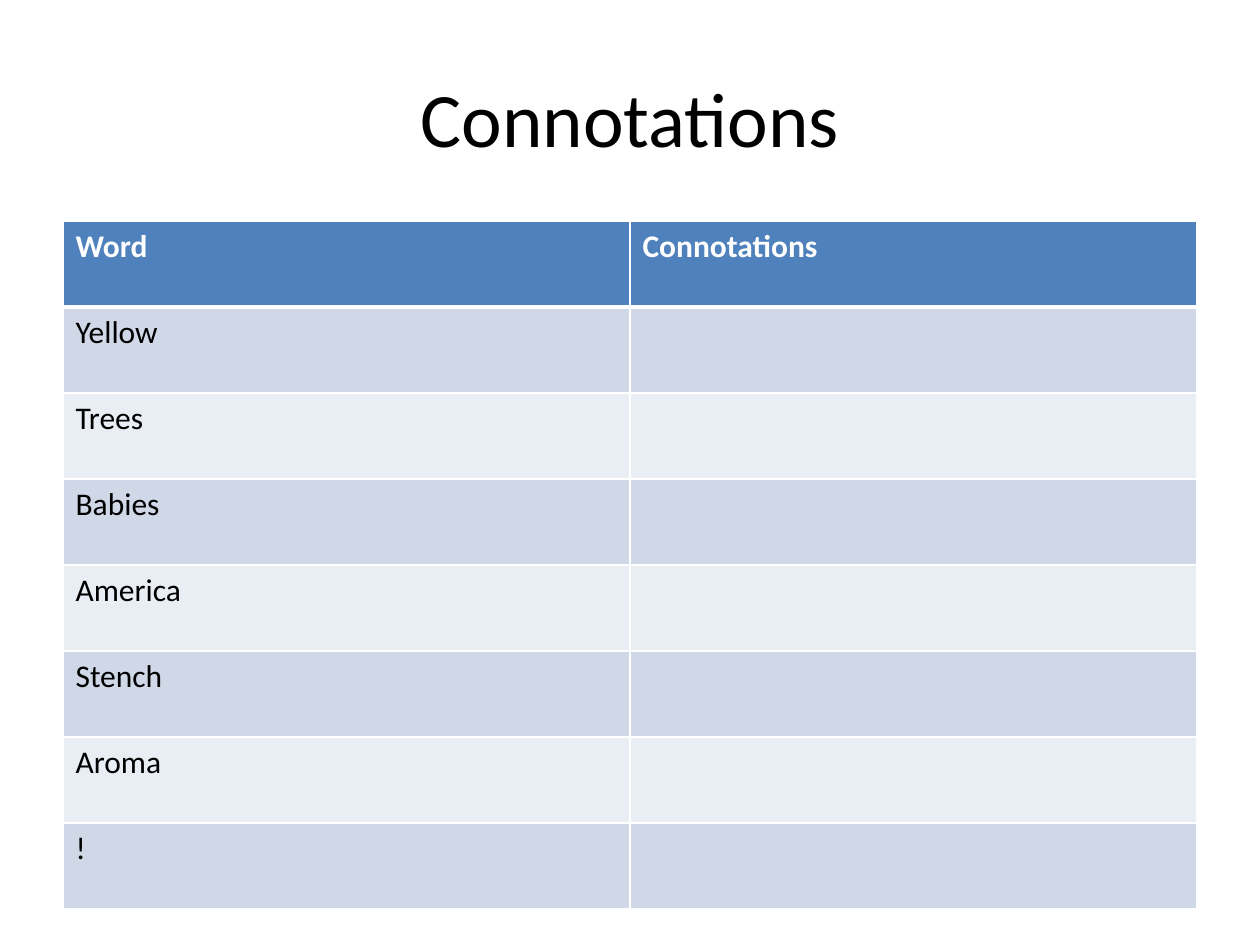
from lxml.etree import SubElement
from pptx import Presentation
from pptx.dml.color import RGBColor
from pptx.enum.shapes import MSO_SHAPE
from pptx.enum.text import MSO_ANCHOR, PP_ALIGN
from pptx.oxml.ns import qn
from pptx.util import Pt

PX = 914400 // 126
WHITE, BLACK = "FFFFFF", "000000"
HEADER_FILL = "4F81BD"
BAND_FILLS = ["D0D8E8", "E9EDF4"]


def style_text(paragraph, color, **format_values):
    paragraph.font.color.rgb = RGBColor.from_string(color)
    for name, value in {"name": "Calibri", **format_values}.items():
        setattr(paragraph.font, name, value)


def add_border(cell, side, points):
    line = SubElement(cell._tc.get_or_add_tcPr(), qn(f"a:ln{side}"), w=str(Pt(points)))
    fill = SubElement(line, qn("a:solidFill"))
    SubElement(fill, qn("a:srgbClr"), val=WHITE)


prs = Presentation()
prs.slide_width, prs.slide_height = 1260 * PX, 945 * PX
slide = prs.slides.add_slide(prs.slide_layouts[6])

# Title
title = slide.shapes.add_shape(MSO_SHAPE.RECTANGLE, 63 * PX, 38 * PX, 1134 * PX, 158 * PX)
title.shadow.inherit = False
title.fill.solid()
title.fill.fore_color.rgb = RGBColor.from_string(WHITE)
title.line.fill.background()
title.text_frame.word_wrap = True
title.text_frame.vertical_anchor = MSO_ANCHOR.MIDDLE
title.text_frame.text = "Connotations"
heading = title.text_frame.paragraphs[0]
heading.alignment = PP_ALIGN.CENTER
style_text(heading, BLACK, size=Pt(44))

# Words, with an empty column for their connotations
words = ["Yellow", "Trees", "Babies", "America", "Stench", "Aroma", "!"]
rows = [("Word", "Connotations")] + [(word, "") for word in words]
row_height = 86
table = slide.shapes.add_table(
    len(rows), 2, 63 * PX, 221 * PX, 1134 * PX, len(rows) * row_height * PX
).table

for r, texts in enumerate(rows):
    is_header = r == 0
    table.rows[r].height = row_height * PX
    for c, text in enumerate(texts):
        cell = table.cell(r, c)
        cell.text = text
        style_text(cell.text_frame.paragraphs[0], WHITE if is_header else BLACK,
                   size=Pt(18), bold=is_header)
        for side in "LRTB":
            below_header = (side == "B" and r == 0) or (side == "T" and r == 1)
            add_border(cell, side, 3 if below_header else 1)
        cell.fill.solid()
        cell.fill.fore_color.rgb = RGBColor.from_string(
            HEADER_FILL if is_header else BAND_FILLS[(r - 1) % 2])

prs.save("out.pptx")
